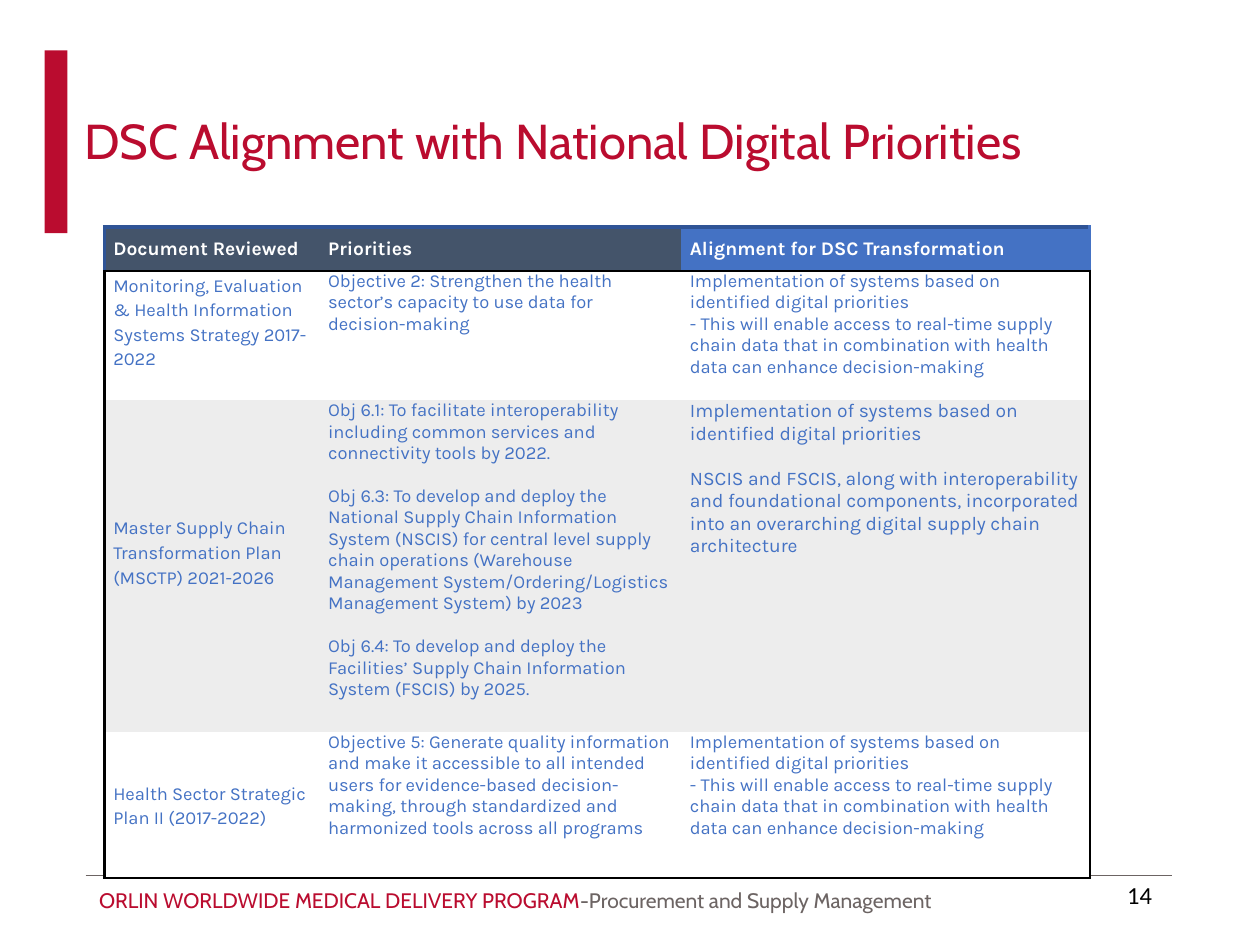
from pptx import Presentation
from pptx import util as u
from pptx.dml.color import RGBColor
from pptx.enum import shapes, text
from pptx.oxml import parse_xml
from pptx.oxml.ns import nsdecls

Pt = u.Pt
COLORS = dict(red="BA0C2F", gray="6C6463", black="000000", white="FFFFFF", navy="2F5496",
              slate="44546A", blue="4472C4", band="EDEDED")

SYSTEMS = "Implementation of systems based on identified digital priorities"
DATA_USE = [SYSTEMS, "- This will enable access to real-time supply chain data that in "
            "combination with health data can enhance decision-making"]
ROWS = [
    (["Document Reviewed"], ["Priorities"], ["Alignment for DSC Transformation"]),
    (["Monitoring, Evaluation & Health Information Systems Strategy 2017-2022"],
     ["Objective 2: Strengthen the health sector’s capacity to use data for decision-making"],
     DATA_USE),
    (["Master Supply Chain Transformation Plan (MSCTP) 2021-2026"],
     ["Obj 6.1: To facilitate interoperability including common services and connectivity "
      "tools by 2022.",
      "Obj 6.3: To develop and deploy the National Supply Chain Information System (NSCIS) "
      "for central level supply chain operations (Warehouse Management "
      "System/Ordering/Logistics Management System) by 2023",
      "Obj 6.4: To develop and deploy the Facilities’ Supply Chain Information System "
      "(FSCIS) by 2025."],
     [SYSTEMS,
      "NSCIS and FSCIS, along with interoperability and foundational components, "
      "incorporated into an overarching digital supply chain architecture"]),
    (["Health Sector Strategic Plan II (2017-2022)"],
     ["Objective 5: Generate quality information and make it accessible to all intended "
      "users for evidence-based decision-making, through standardized and harmonized tools "
      "across all programs"],
     DATA_USE),
]
COL_WIDTHS = [122.75, 206.75, 233.5]
ROW_HEIGHTS = [25, 73, 189.5, 83.5]
ROW_FILLS = [None, None, "band", "white"]
HEADER_FILLS = ["slate", "slate", "blue"]
DOCUMENT_BOTTOM_MARGINS = [0, 16, 16, 0]
TEXT_BOXES = [
    ((49.5, 503.5, 536, 21.5), "Cabin", 12, 1,
     [("ORLIN WORLDWIDE MEDICAL DELIVERY PROGRAM", "red"),
      ("-Procurement and Supply Management", "gray")]),
    ((637, 499, 33, 24.5), "Calibri", 14, 1, [("14", "black")]),
    ((41, 63, 667, 38), "Cabin", 28, 0.9,
     [("DSC Alignment with National Digital Priorities", "red")]),
]


def rgb(name):
    return RGBColor.from_string(COLORS[name])


def add_run(p, words, color, **fmt):
    r = p.add_run()
    r.text = words
    r.font.color.rgb = rgb(color)
    for key, value in fmt.items():
        setattr(r.font, key, value)


def set_borders(cell, edges):
    tcPr = cell._tc.get_or_add_tcPr()
    for i, side in enumerate("LRTB"):
        color, width = edges.get(side, (None, 0))
        paint = (f'<a:solidFill><a:srgbClr val="{COLORS[color]}"/></a:solidFill>'
                 if color else "<a:noFill/>")
        tcPr.insert(i, parse_xml(
            f'<a:ln{side} {nsdecls("a")} w="{int(Pt(width))}">{paint}</a:ln{side}>'))


def cell_edges(row, col):
    edges = {}
    if row == 0:
        edges["T"] = ("navy", 2.25)
    if row == 1:
        edges["T"] = ("black", 1.5)
    if row in (0, len(ROWS) - 1):
        edges["B"] = ("black", 1.5)
    if col == 0:
        edges["L"] = ("black", 1.5) if row else ("navy", 2.25)
    if col == len(COL_WIDTHS) - 1:
        edges["R"] = ("black", 1.5) if row else ("blue", 2.25)
    return edges


def fill_cell(cell, row, col, paragraphs):
    header = row == 0
    size = 11 if header or (row, col) == (2, 2) else 10.5
    fmt = dict(margin_left=Pt(5), margin_right=Pt(5), margin_top=0,
               margin_bottom=Pt(0 if col else DOCUMENT_BOTTOM_MARGINS[row]),
               vertical_anchor=text.MSO_ANCHOR.MIDDLE if header or col == 0
               else text.MSO_ANCHOR.TOP)
    for key, value in fmt.items():
        setattr(cell, key, value)
    fill = HEADER_FILLS[col] if header else ROW_FILLS[row]
    if fill:
        cell.fill.solid()
        cell.fill.fore_color.rgb = rgb(fill)
    else:
        cell.fill.background()
    set_borders(cell, cell_edges(row, col))
    tf = cell.text_frame
    for i, words in enumerate(paragraphs):
        p = tf.add_paragraph() if i else tf.paragraphs[0]
        if col == 0 and not header:
            p.line_spacing = 1.15
        if i and row == 2:
            p.space_before = Pt(size * 1.17)
        add_run(p, words, "white" if header else "blue",
                name="Karla", size=Pt(size), bold=header)


def main():
    prs = Presentation()
    prs.slide_width, prs.slide_height = Pt(720), Pt(540)
    s = prs.slides.add_slide(prs.slide_layouts[6])

    bar = s.shapes.add_shape(shapes.MSO_SHAPE.RECTANGLE, Pt(25.5), Pt(28.75), Pt(13), Pt(104.5))
    bar.shadow.inherit = False
    bar.fill.solid()
    bar.fill.fore_color.rgb = rgb("red")
    bar.line.fill.background()

    rule = s.shapes.add_connector(shapes.MSO_CONNECTOR.STRAIGHT,
                                  Pt(49), Pt(500.5), Pt(670), Pt(500.5))
    rule.line.color.rgb = rgb("gray")
    rule.line.width = Pt(0.5)
    rule._element.spPr.append(parse_xml(f'<a:effectLst {nsdecls("a")}/>'))

    for box, font, size, spacing, runs in TEXT_BOXES:
        tf = s.shapes.add_textbox(*map(Pt, box)).text_frame
        tf.word_wrap = True
        tf.vertical_anchor = text.MSO_ANCHOR.MIDDLE
        p = tf.paragraphs[0]
        p.line_spacing = spacing
        for words, color in runs:
            add_run(p, words, color, name=font, size=Pt(size))

    table = s.shapes.add_table(len(ROWS), len(COL_WIDTHS), Pt(59.75), Pt(129.75),
                               Pt(sum(COL_WIDTHS)), Pt(sum(ROW_HEIGHTS))).table
    table.horz_banding = False
    for column, width in zip(table.columns, COL_WIDTHS):
        column.width = Pt(width)
    for i, (height, row) in enumerate(zip(ROW_HEIGHTS, ROWS)):
        table.rows[i].height = Pt(height)
        for j, paragraphs in enumerate(row):
            fill_cell(table.cell(i, j), i, j, paragraphs)

    prs.save("out.pptx")


if __name__ == "__main__":
    main()
